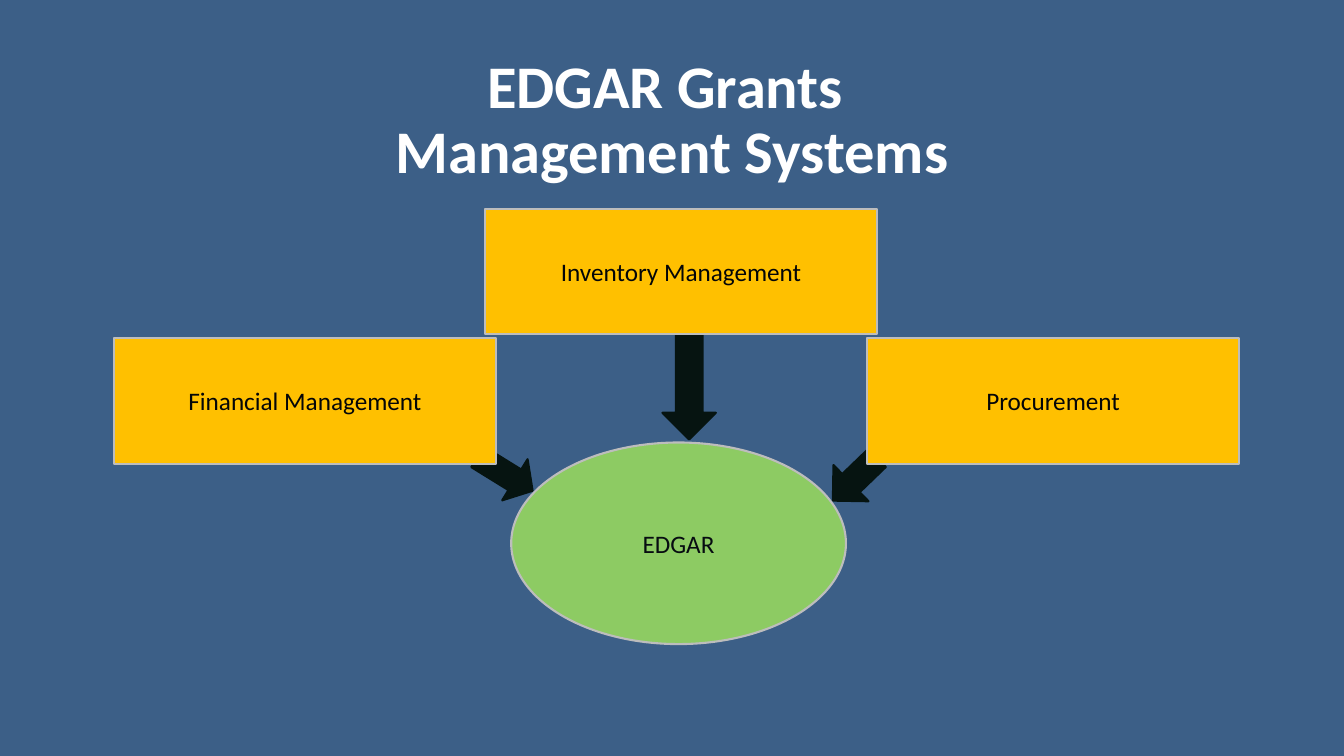
"""Build the EDGAR grants management systems slide."""
from pptx import Presentation
from pptx.dml.color import RGBColor
from pptx.enum.shapes import MSO_SHAPE
from pptx.enum.text import MSO_ANCHOR, PP_ALIGN
from pptx.util import Inches, Pt

RECTANGLE = MSO_SHAPE.RECTANGLE
ELLIPSE = MSO_SHAPE.FLOWCHART_CONNECTOR
RIGHT_ARROW = MSO_SHAPE.RIGHT_ARROW
DOWN_ARROW = MSO_SHAPE.DOWN_ARROW
MIDDLE = MSO_ANCHOR.MIDDLE
CENTER = PP_ALIGN.CENTER

BACKGROUND, ARROW, BORDER = "3C5F87", "061411", "BDBDBD"
YELLOW, GREEN = "FFC000", "8DCB63"
WHITE, BLACK, DARK = "FFFFFF", "040608", "070C11"


def color(hex_string):
    return RGBColor.from_string(hex_string)


def write(shape, text, size, text_color, bold=False):
    frame = shape.text_frame
    frame.word_wrap = True
    frame.vertical_anchor = MIDDLE
    frame.text = text
    para = frame.paragraphs[0]
    para.alignment = CENTER
    para.font.name = "Calibri"
    para.font.size = Pt(size)
    para.font.bold = bold
    para.font.color.rgb = color(text_color)
    return para


deck = Presentation()
deck.slide_width = Inches(13.33)
deck.slide_height = Inches(7.5)
page = deck.slides.add_slide(deck.slide_layouts[6])
page.background.fill.solid()
page.background.fill.fore_color.rgb = color(BACKGROUND)

title = page.shapes.add_textbox(Inches(3.45), Inches(0.58), Inches(6.43), Inches(1.25))
title_para = write(title, "EDGAR Grants \vManagement Systems", 43.2, WHITE, bold=True)
title_para.line_spacing = 0.9

arrows = [
    (RIGHT_ARROW, 6.23, 3.49, 1.21, 0.53, 90, 0.5),
    (DOWN_ARROW, 4.77, 4.38, 0.48, 0.64, 301.7, 0.43),
    (DOWN_ARROW, 8.23, 4.45, 0.5, 0.61, 46, 0.5),
]
for kind, left, top, width, height, rotation, head in arrows:
    arrow = page.shapes.add_shape(kind, Inches(left), Inches(top), Inches(width), Inches(height))
    arrow.rotation = rotation
    arrow.adjustments[1] = head
    arrow.shadow.inherit = False
    arrow.fill.solid()
    arrow.fill.fore_color.rgb = color(ARROW)
    arrow.line.color.rgb = color(ARROW)
    arrow.line.width = Pt(1.5)

systems = [
    ("Inventory Management", RECTANGLE, 4.81, 2.07, 3.89, 1.24, YELLOW, BLACK),
    ("Procurement", RECTANGLE, 8.6, 3.35, 3.69, 1.25, YELLOW, BLACK),
    ("EDGAR", ELLIPSE, 5.07, 4.39, 3.32, 2, GREEN, DARK),
    ("Financial Management", RECTANGLE, 1.13, 3.35, 3.79, 1.25, YELLOW, BLACK),
]
for label, kind, left, top, width, height, fill, text_color in systems:
    box = page.shapes.add_shape(kind, Inches(left), Inches(top), Inches(width), Inches(height))
    box.shadow.inherit = False
    box.fill.solid()
    box.fill.fore_color.rgb = color(fill)
    box.line.color.rgb = color(BORDER)
    box.line.width = Pt(1.5)
    write(box, label, 18, text_color)

deck.save("out.pptx")
